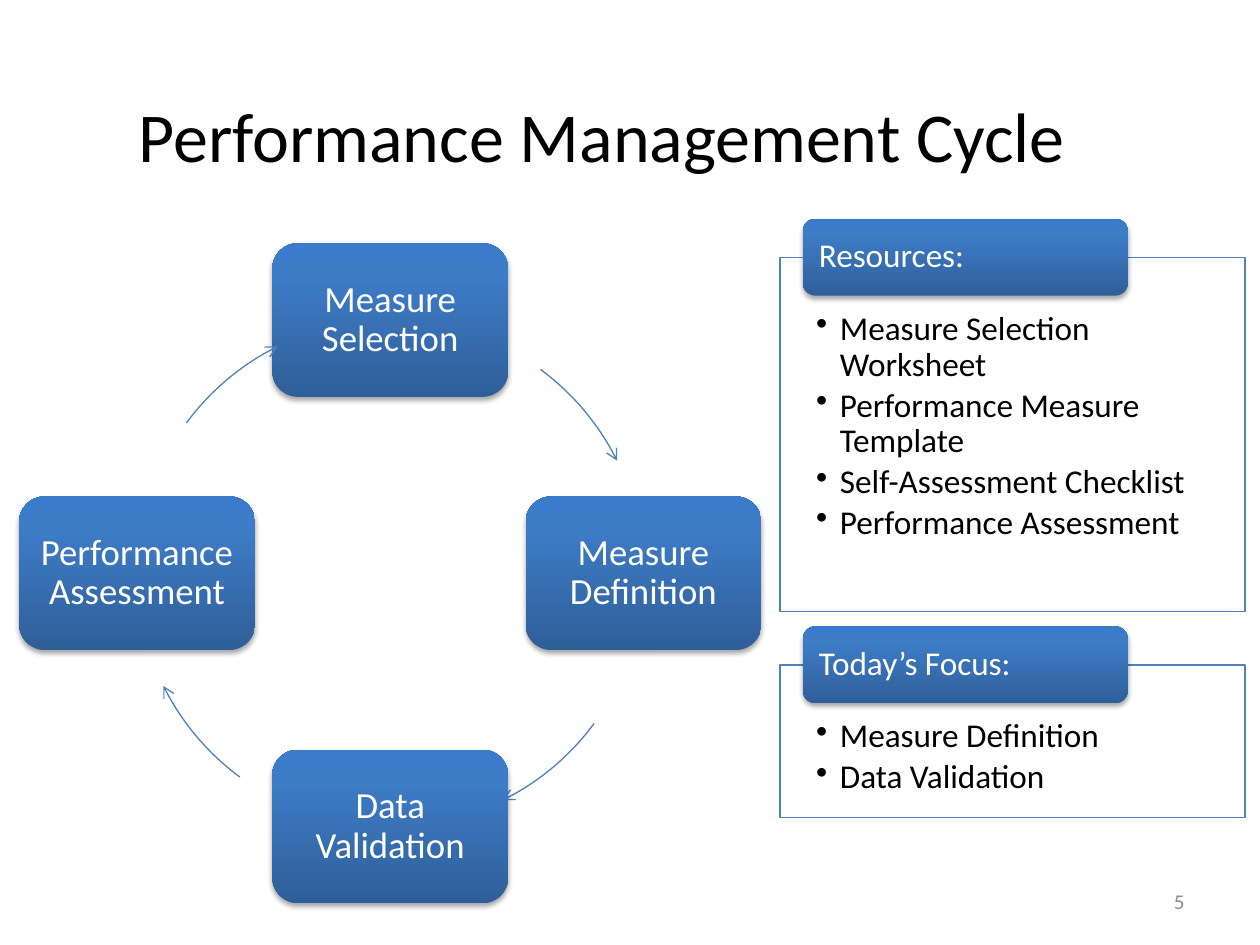
from copy import deepcopy
from dataclasses import dataclass

from lxml.etree import SubElement
from pptx import Presentation
from pptx.dml.color import RGBColor
from pptx.enum.shapes import MSO_SHAPE as Preset
from pptx.enum.text import MSO_ANCHOR as Anchor, MSO_AUTO_SIZE as AutoSize, PP_ALIGN as Align
from pptx.oxml.ns import qn
from pptx.util import Pt

COLORS = {"black": "000000", "white": "FFFFFF", "line": "4F81BD", "number": "8C8C8C"}
GRADIENT = ((0, "2F5F99"), (0.8, "3D7CC7"), (1, "3A7CCB"))

CENTER_X, CENTER_Y, RADIUS = 223, 327.6, 144.7
STEP_W, STEP_H = 134.8, 87.8
ARC_START, ARC_END = 306.4, 333.6
PANEL_X, PANEL_W = 445.7, 265.7
HEADER_W, HEADER_H, HEADER_INDENT = 185.8, 44, 13
BULLET_INDENT = 13.7


@dataclass
class Step:
    label: str
    dx: int
    dy: int


@dataclass
class Panel:
    heading: str
    top: float
    height: float
    items: tuple[str, ...]


STEPS = (
    Step("Measure Selection", 0, -1),
    Step("Measure Definition", 1, 0),
    Step("Data Validation", 0, 1),
    Step("Performance Assessment", -1, 0),
)
PANELS = (
    Panel("Resources:", 147, 202.5, (
        "Measure Selection Worksheet",
        "Performance Measure Template",
        "Self-Assessment Checklist",
        "Performance Assessment",
    )),
    Panel("Today’s Focus:", 380, 87.2, ("Measure Definition", "Data Validation")),
)


def rgb(name: str) -> RGBColor:
    return RGBColor.from_string(COLORS[name])


def apply(target, values: dict) -> None:
    for name, value in values.items():
        setattr(target, name, value)


def write(shape, lines, size: float, color: str, margins=(7.2, 3.6, 7.2, 3.6),
          anchor=Anchor.MIDDLE, bulleted=False, **paragraph_format) -> None:
    """Fill the frame; margins run left, top, right, bottom in points."""
    frame = shape.text_frame
    sides = ("margin_left", "margin_top", "margin_right", "margin_bottom")
    apply(frame, {"word_wrap": True, "auto_size": AutoSize.NONE, "vertical_anchor": anchor,
                  **{side: Pt(value) for side, value in zip(sides, margins)}})
    for index, line in enumerate(lines):
        paragraph = frame.add_paragraph() if index else frame.paragraphs[0]
        apply(paragraph, {"text": line, **paragraph_format})
        if bulleted:
            properties = paragraph._p.get_or_add_pPr()
            properties.set("marL", str(Pt(BULLET_INDENT)))
            properties.set("indent", str(-Pt(BULLET_INDENT)))
            SubElement(properties, qn("a:buChar"), char="•")
        apply(paragraph.font, {"size": Pt(size), "name": "Calibri"})
        paragraph.font.color.rgb = rgb(color)


def add_outlined(slide, preset, left: float, top: float, width: float, height: float):
    shape = slide.shapes.add_shape(preset, Pt(left), Pt(top), Pt(width), Pt(height))
    shape.shadow.inherit = False
    shape.line.color.rgb = rgb("line")
    shape.line.width = Pt(0.75)
    return shape


def add_glossy_box(slide, left: float, top: float, width: float, height: float):
    """Rounded box with the blue gradient and a soft shadow below."""
    box = add_outlined(slide, Preset.ROUNDED_RECTANGLE, left, top, width, height)
    box.line.fill.background()
    box.fill.gradient()
    box.fill.gradient_angle = 90
    properties = box._element.spPr
    stops = properties.find(".//" + qn("a:gsLst"))
    stops.append(deepcopy(stops[-1]))
    for stop, (position, color) in zip(box.fill.gradient_stops, GRADIENT):
        stop.position = position
        stop.color.rgb = RGBColor.from_string(color)
    shadow = SubElement(properties.find(qn("a:effectLst")), qn("a:outerShdw"),
                        blurRad=str(Pt(3.1)), dist=str(Pt(1.8)), dir="5400000", rotWithShape="0")
    shadow_color = SubElement(shadow, qn("a:srgbClr"), val=COLORS["black"])
    SubElement(shadow_color, qn("a:alpha"), val="35000")
    return box


def add_step(slide, step: Step) -> None:
    box = add_glossy_box(slide, CENTER_X + step.dx * RADIUS - STEP_W / 2,
                         CENTER_Y + step.dy * RADIUS - STEP_H / 2, STEP_W, STEP_H)
    write(box, [step.label], 21, "white", (6.5,) * 4, alignment=Align.CENTER, line_spacing=0.9)


def add_cycle_arrow(slide, start: float, end: float) -> None:
    """Arc of the cycle circle between two clockwise angles in degrees."""
    arc = add_outlined(slide, Preset.ARC, CENTER_X - RADIUS, CENTER_Y - RADIUS,
                       2 * RADIUS, 2 * RADIUS)
    arc.fill.background()
    for index, angle in enumerate((start, end)):
        arc.adjustments[index] = angle % 360 * 0.6  # 60000ths of a degree / 100000
    SubElement(arc.line._get_or_add_ln(), qn("a:tailEnd"), type="arrow")


def add_panel(slide, panel: Panel) -> None:
    body = add_outlined(slide, Preset.RECTANGLE, PANEL_X, panel.top, PANEL_W, panel.height)
    body.fill.solid()
    body.fill.fore_color.rgb = rgb("white")
    fill_color = body._element.spPr.find(qn("a:solidFill"))[0]
    SubElement(fill_color, qn("a:alpha"), val="90000")
    write(body, panel.items, 19, "black", (20.6, 31, 20.6, 10.8), Anchor.TOP, bulleted=True,
          alignment=Align.LEFT, line_spacing=0.9, space_after=Pt(2.85))
    header = add_glossy_box(slide, PANEL_X + HEADER_INDENT, panel.top - HEADER_H / 2,
                            HEADER_W, HEADER_H)
    write(header, [panel.heading], 19, "white", (7.2, 0, 7.2, 0),
          alignment=Align.LEFT, line_spacing=0.9)


def main() -> None:
    deck = Presentation()
    apply(deck, {"slide_width": Pt(720), "slide_height": Pt(540)})
    slide = deck.slides.add_slide(deck.slide_layouts[5])

    title = slide.shapes.title
    apply(title, {"left": Pt(72), "top": Pt(31.7), "width": Pt(612), "height": Pt(90)})
    write(title, ["Performance Management Cycle"], 40, "black", alignment=Align.LEFT)

    for quarter, step in enumerate(STEPS):
        add_step(slide, step)
        add_cycle_arrow(slide, ARC_START + 90 * quarter, ARC_END + 90 * quarter)
    for panel in PANELS:
        add_panel(slide, panel)

    page_number = slide.shapes.add_textbox(Pt(516), Pt(500.5), Pt(168), Pt(28.8))
    write(page_number, ["5"], 12, "number", alignment=Align.RIGHT)
    deck.save("out.pptx")


if __name__ == "__main__":
    main()
